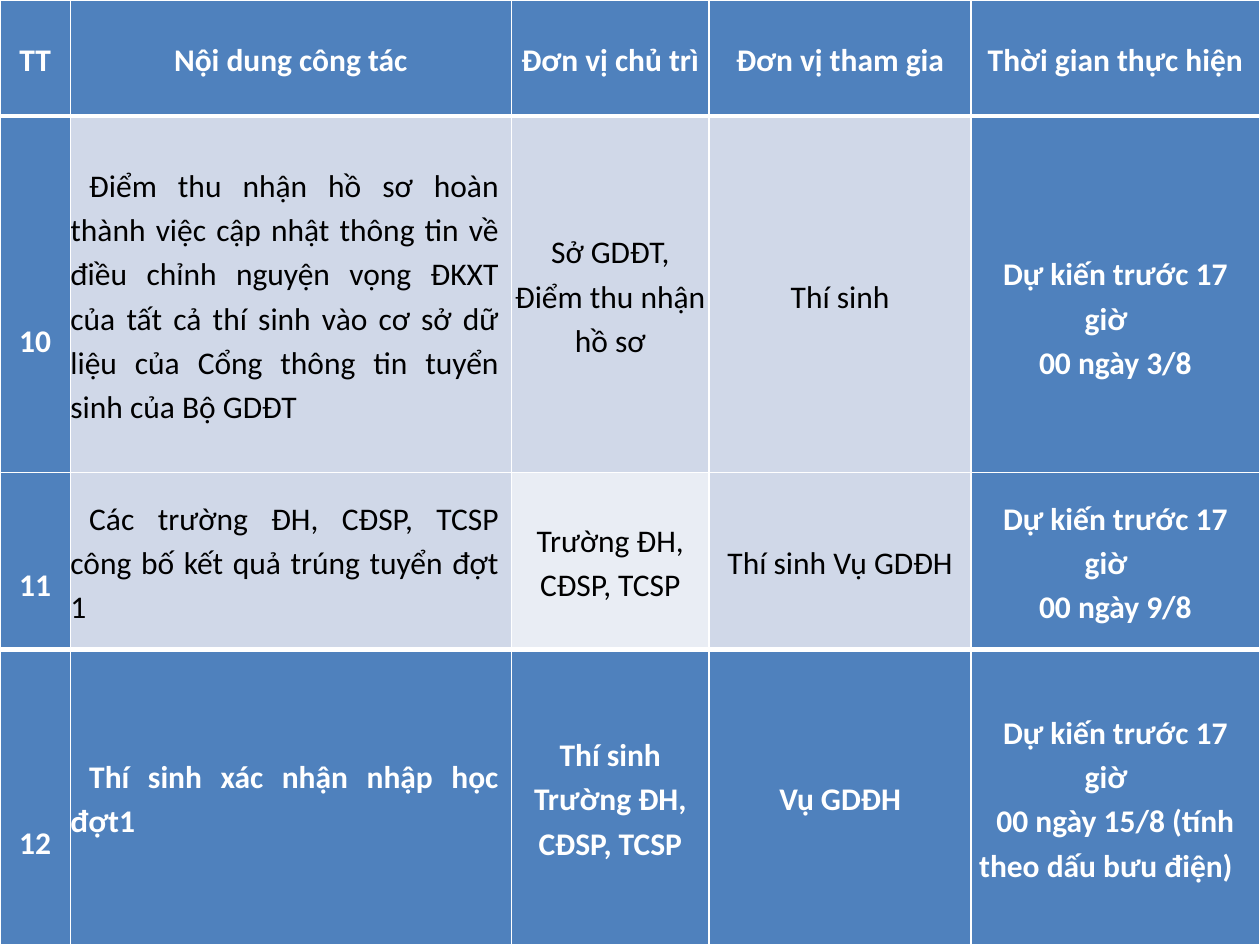
from lxml import etree
from pptx import Presentation
from pptx.dml.color import RGBColor
from pptx.enum.text import MSO_ANCHOR, PP_ALIGN
from pptx.oxml.ns import qn
from pptx.util import Cm, Pt

COLORS = {
    "background": "E0E3F0",
    "strong": "4F81BD",
    "band": "D0D8E8",
    "light": "E9EDF4",
    "white": "FFFFFF",
    "black": "000000",
}
COLUMN_WIDTHS = [1.42, 8.89, 3.99, 5.28, 5.82]
ROW_HEIGHTS = [2.34, 7.19, 3.56, 5.96]
LINE_HEIGHT = 0.89
INDENT = 0.38
CONTENT_COLUMN, LEAD_COLUMN, TIME_COLUMN = 1, 2, 4

ROWS = [
    ["TT", "Nội dung công tác", "Đơn vị chủ trì", "Đơn vị tham gia",
     "Thời gian thực hiện"],
    ["10",
     "Điểm thu nhận hồ sơ hoàn thành việc cập nhật thông tin về điều chỉnh "
     "nguyện vọng ĐKXT của tất cả thí sinh vào cơ sở dữ liệu của Cổng thông "
     "tin tuyển sinh của Bộ GDĐT",
     "Sở GDĐT,\nĐiểm thu nhận hồ sơ",
     "Thí sinh",
     "Dự kiến trước 17 giờ\n00 ngày 3/8"],
    ["11",
     "Các trường ĐH, CĐSP, TCSP công bố kết quả trúng tuyển đợt 1",
     "Trường ĐH, CĐSP, TCSP",
     "Thí sinh Vụ GDĐH",
     "Dự kiến trước 17 giờ\n00 ngày 9/8"],
    ["12",
     "Thí sinh xác nhận nhập học đợt1",
     "Thí sinh Trường ĐH, CĐSP, TCSP",
     "Vụ GDĐH",
     "Dự kiến trước 17 giờ\n00 ngày 15/8 (tính theo dấu bưu điện)"],
]
LAST_ROW = len(ROWS) - 1
# Lines of space above the text, by (row, column)
LINES_ABOVE = {(1, 0): 2, (2, 0): 1, (3, 0): 2, (1, TIME_COLUMN): 1}


def color(name):
    return RGBColor.from_string(COLORS[name])


def set_borders(cell, widths):
    """Draw white borders; widths maps L, R, T and B to points."""
    properties = cell._tc.get_or_add_tcPr()
    for index, (side, width) in enumerate(widths.items()):
        line = etree.Element(qn(f"a:ln{side}"), w=str(Pt(width)))
        fill = etree.SubElement(line, qn("a:solidFill"))
        etree.SubElement(fill, qn("a:srgbClr"), val=COLORS["white"])
        properties.insert(index, line)


def format_paragraph(paragraph, row, column, strong):
    is_content = row > 0 and column == CONTENT_COLUMN
    paragraph.alignment = PP_ALIGN.JUSTIFY if is_content else PP_ALIGN.CENTER
    paragraph.line_spacing = 1.15
    if row > 0 and column in (CONTENT_COLUMN, TIME_COLUMN):
        right = Cm(0.25) if is_content else Cm(INDENT)
        properties = paragraph._p.get_or_add_pPr()
        for name, value in {"marL": 0, "marR": right, "indent": Cm(INDENT)}.items():
            properties.set(name, str(int(value)))
    for run in paragraph.runs:
        for name, value in {"name": "Calibri", "size": Pt(18), "bold": strong}.items():
            setattr(run.font, name, value)
        run.font.color.rgb = color("white" if strong else "black")


def fill_cell(cell, text, row, column):
    strong = row in (0, LAST_ROW) or column in (0, TIME_COLUMN)
    fill = "strong" if strong else "band"
    if (row, column) == (2, LEAD_COLUMN):
        fill = "light"
    cell.fill.solid()
    cell.fill.fore_color.rgb = color(fill)
    formats = {
        "margin_left": 0,
        "margin_right": 0,
        "margin_top": Cm(LINE_HEIGHT * LINES_ABOVE.get((row, column), 0)),
        "margin_bottom": 0,
        "vertical_anchor": MSO_ANCHOR.MIDDLE,
    }
    for name, value in formats.items():
        setattr(cell, name, value)
    set_borders(cell, {
        "L": 1,
        "R": 1,
        "T": 3 if row in (1, LAST_ROW) else 1,
        "B": 3 if row in (0, LAST_ROW - 1) else 1,
    })
    cell.text_frame.text = text
    for paragraph in cell.text_frame.paragraphs:
        format_paragraph(paragraph, row, column, strong)


def add_schedule(slide, left, top, width, height):
    table = slide.shapes.add_table(
        len(ROWS), len(COLUMN_WIDTHS), left, top, width, height).table
    for column, share in zip(table.columns, COLUMN_WIDTHS):
        column.width = int(width * share / sum(COLUMN_WIDTHS))
    for table_row, share in zip(table.rows, ROW_HEIGHTS):
        table_row.height = int(height * share / sum(ROW_HEIGHTS))
    for row, texts in enumerate(ROWS):
        for column, text in enumerate(texts):
            fill_cell(table.cell(row, column), text, row, column)


def main():
    presentation = Presentation()
    presentation.slide_width, presentation.slide_height = Cm(25.4), Cm(19.05)
    slide = presentation.slides.add_slide(presentation.slide_layouts[6])
    slide.background.fill.solid()
    slide.background.fill.fore_color.rgb = color("background")
    add_schedule(slide, 0, 0, presentation.slide_width, presentation.slide_height)
    presentation.save("out.pptx")


if __name__ == "__main__":
    main()
